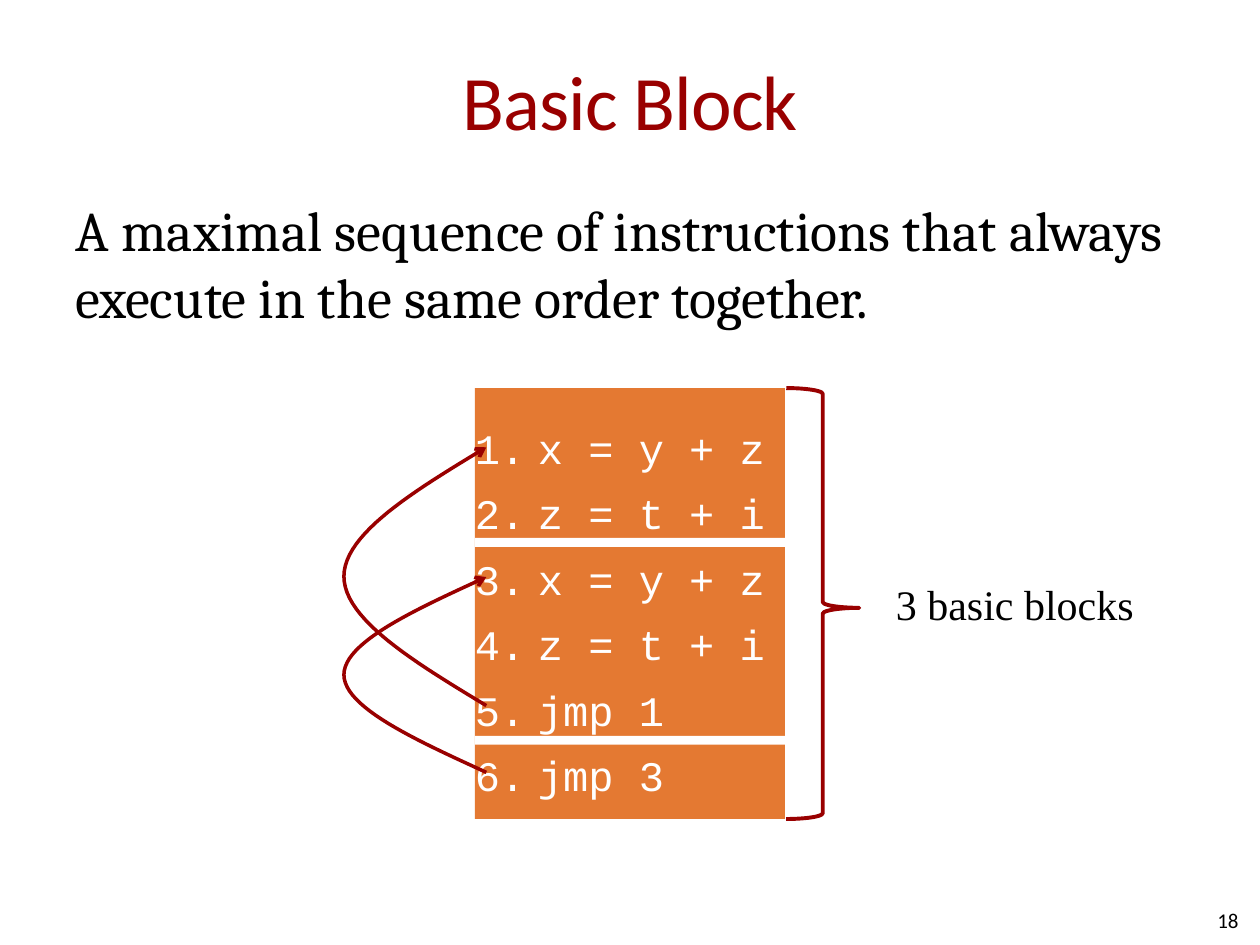
"""Build a slide that explains basic blocks with a six-line program."""
from lxml import etree
from pptx import Presentation
from pptx import util as u
from pptx.dml import color
from pptx.enum import shapes, text
from pptx.oxml import ns

RED, ORANGE, WHITE, BLACK = "990000", "E47932", "FFFFFF", "000000"


def rgb(value):
    return color.RGBColor.from_string(value)


def add_xml(parent, tag, **attributes):
    element = etree.SubElement(parent, ns.qn(tag))
    for name, value in attributes.items():
        element.set(name, value)
    return element


def cubic(points, steps=24):
    """Return evenly sampled points of a cubic curve, without its start."""
    curve = []
    for step in range(1, steps + 1):
        t = step / steps
        weights = ((1 - t) ** 3, 3 * t * (1 - t) ** 2, 3 * t ** 2 * (1 - t), t ** 3)
        curve.append(tuple(sum(w * p[axis] for w, p in zip(weights, points))
                           for axis in (0, 1)))
    return curve


class SlideBuilder:
    """Hold the current slide and draw its elements in one style."""

    def __init__(self, deck):
        self.slide = deck.slides.add_slide(deck.slide_layouts[5])

    def add_words(self, paragraph, words, font, size, hue):
        run = paragraph.add_run()
        run.text = words
        run.font.name, run.font.size = font, u.Pt(size)
        run.font.color.rgb = rgb(hue)
        return run

    def set_frame(self, frame, insets, anchor, wrap=True):
        frame.word_wrap = wrap
        frame.vertical_anchor = anchor
        frame.margin_left = frame.margin_right = u.Inches(insets[0])
        frame.margin_top = frame.margin_bottom = u.Inches(insets[1])

    def title(self, words, box):
        title = self.slide.shapes.title
        title.left, title.top, title.width, title.height = map(u.Inches, box)
        self.set_frame(title.text_frame, (0, 0.05), text.MSO_ANCHOR.MIDDLE)
        paragraph = title.text_frame.paragraphs[0]
        paragraph.alignment = text.PP_ALIGN.CENTER
        run = self.add_words(paragraph, words, "Calibri", 44, RED)
        run._r.get_or_add_rPr().set("spc", "-50")

    def text(self, words, box, font, size, insets=(0, 0), anchor=text.MSO_ANCHOR.TOP,
             align=text.PP_ALIGN.LEFT, before=0, wrap=True):
        label = self.slide.shapes.add_textbox(*map(u.Inches, box))
        self.set_frame(label.text_frame, insets, anchor, wrap)
        if not wrap:
            label.text_frame.auto_size = text.MSO_AUTO_SIZE.SHAPE_TO_FIT_TEXT
        paragraph = label.text_frame.paragraphs[0]
        paragraph.alignment = align
        paragraph.space_before = u.Pt(before)
        self.add_words(paragraph, words, font, size, BLACK)
        return label

    def rectangle(self, box, fill):
        rectangle = self.slide.shapes.add_shape(shapes.MSO_SHAPE.RECTANGLE,
                                                *map(u.Inches, box))
        rectangle.shadow.inherit = False
        rectangle.fill.solid()
        rectangle.fill.fore_color.rgb = rgb(fill)
        rectangle.line.fill.background()
        return rectangle

    def code(self, lines, box):
        frame = self.rectangle(box, ORANGE).text_frame
        self.set_frame(frame, (0, 0), text.MSO_ANCHOR.MIDDLE)
        for index, line in enumerate(lines):
            paragraph = frame.add_paragraph() if index else frame.paragraphs[0]
            paragraph.alignment = text.PP_ALIGN.LEFT
            paragraph.line_spacing = 1.3
            properties = paragraph._p.get_or_add_pPr()
            properties.set("marL", str(u.Inches(0.5)))
            properties.set("indent", str(u.Inches(-0.5)))
            add_xml(add_xml(properties, "a:buClr"), "a:srgbClr", val=WHITE)
            add_xml(properties, "a:buAutoNum", type="arabicPeriod")
            self.add_words(paragraph, line, "Courier New", 24, WHITE)

    def outline(self, shape, width):
        shape.shadow.inherit = False
        shape.fill.background()
        shape.line.color.rgb = rgb(RED)
        shape.line.width = u.Pt(width)

    def jump(self, start, end, right=3.86, left=2.73):
        middle, inner = (start + end) / 2, (right + left) / 2
        reach = (start - end) / 6
        lower = [(right, start), (inner, start - reach), (left, middle + reach), (left, middle)]
        upper = [(left, middle), (left, middle - reach), (inner, end + reach), (right, end)]
        points = [(u.Inches(x), u.Inches(y)) for x, y in cubic(lower) + cubic(upper)]
        builder = self.slide.shapes.build_freeform(u.Inches(right), u.Inches(start))
        builder.add_line_segments(points, close=False)
        arrow = builder.convert_to_shape()
        self.outline(arrow, 2)
        add_xml(arrow.element.spPr.find(ns.qn("a:ln")), "a:tailEnd", type="arrow")

    def brace(self, box):
        brace = self.slide.shapes.add_shape(shapes.MSO_SHAPE.RIGHT_BRACE,
                                            *map(u.Inches, box))
        brace.adjustments[0], brace.adjustments[1] = 0.08, 0.51
        self.outline(brace, 2.25)
        return brace


def main():
    deck = Presentation()
    deck.slide_width, deck.slide_height = u.Inches(10), u.Inches(7.5)
    page = SlideBuilder(deck)
    page.title("Basic Block", (0.5, 0.17, 9, 1.25))
    page.text("A maximal sequence of instructions that always execute in the same "
              "order together.", (0.5, 1.5, 9, 1.5), "Cambria", 32,
              insets=(0.1, 0.05), before=6.4)
    page.text("18", (7.5, 7.1, 2.33, 0.4), "Calibri", 12,
              anchor=text.MSO_ANCHOR.MIDDLE, align=text.PP_ALIGN.RIGHT)

    left, top, width, height = 3.77, 3.08, 2.46, 3.42
    program = ["x = y + z", "z = t + i"] * 2 + ["jmp 1", "jmp 3"]
    page.code(program, (left, top, width, height))
    for start, end in ((5.6, 3.55), (6.13, 4.58)):
        page.jump(start, end)
    for gap_top in (5.84, 4.27):
        page.rectangle((left, gap_top, 2.47, 0.07), WHITE)

    brace = page.brace((6.24, top, 0.58, height))
    count = page.text("3 basic blocks", (7.11, 4.59, 1.91, 0.4),
                      "Times New Roman", 24, wrap=False)
    page.slide.shapes.add_group_shape([brace, count])
    deck.save("out.pptx")


if __name__ == "__main__":
    main()
